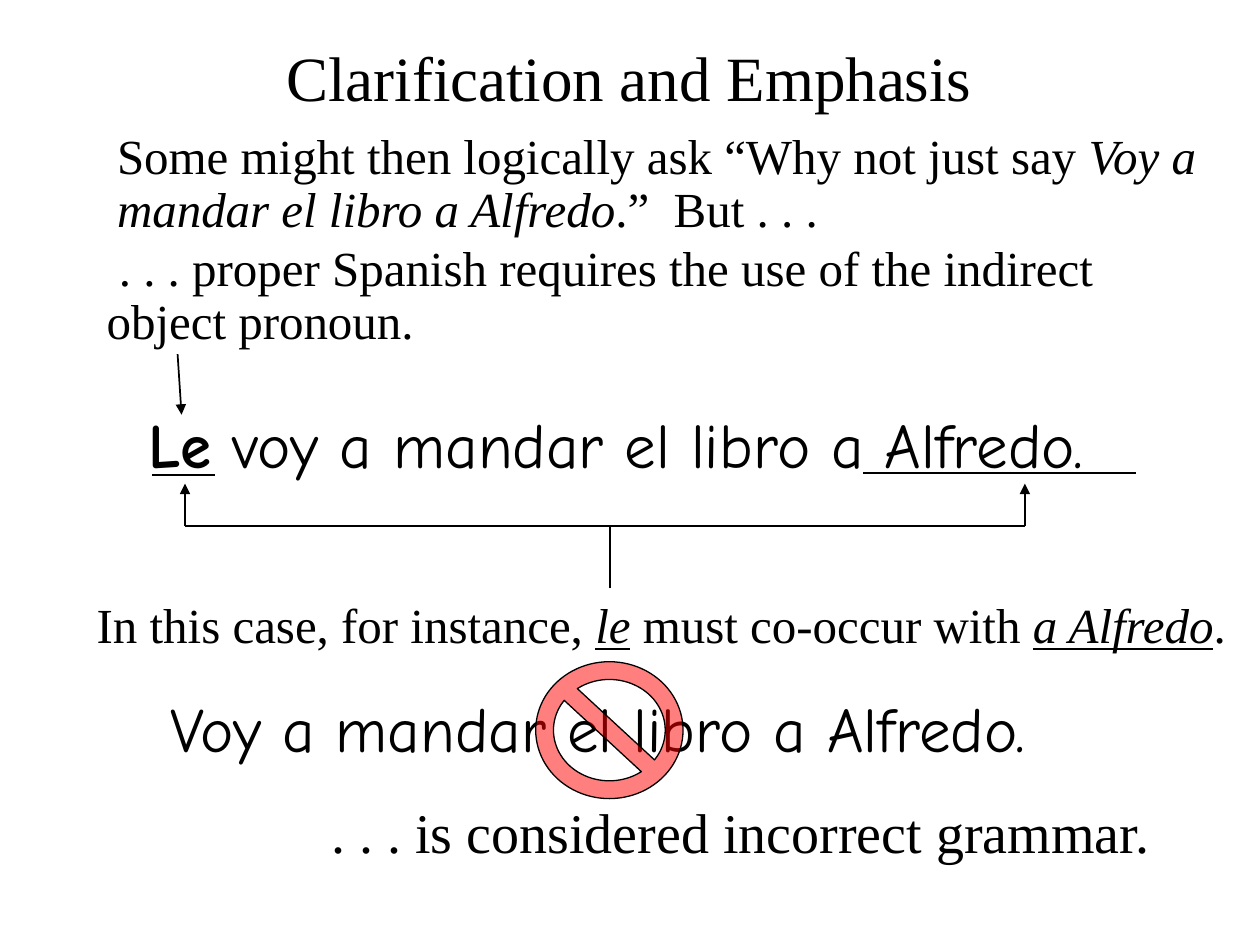
from pptx import Presentation
from pptx.dml.color import RGBColor
from pptx.enum.shapes import MSO_CONNECTOR, MSO_SHAPE
from pptx.enum.text import MSO_ANCHOR, MSO_AUTO_SIZE, PP_ALIGN
from pptx.oxml.ns import qn
from pptx.util import Cm, Pt
from lxml.etree import SubElement

BLACK = RGBColor(0x00, 0x00, 0x00)
RED = RGBColor(0xFF, 0x00, 0x00)
SERIF = "Times New Roman"
COMIC = "Comic Neue"

prs = Presentation()
prs.slide_width, prs.slide_height = Cm(25.4), Cm(19.05)
slide = prs.slides.add_slide(prs.slide_layouts[5])


def write(box, runs, font, size, line_spacing=1.0):
    """Fill a box with one paragraph of (text, style) runs: b, i and u."""
    frame = box.text_frame
    frame.word_wrap = True
    frame.auto_size = MSO_AUTO_SIZE.NONE
    frame.vertical_anchor = MSO_ANCHOR.TOP
    paragraph = frame.paragraphs[0]
    paragraph.line_spacing = line_spacing
    paragraph.space_before = Pt(size / 8)
    paragraph.font.name = font
    paragraph.font.size = Pt(size)
    paragraph.font.color.rgb = BLACK
    for text, style in runs:
        run = paragraph.add_run()
        run.text = text
        if "b" in style:
            run.font.bold = True
        if "i" in style:
            run.font.italic = True
        if "u" in style:
            run.font.underline = True
    return paragraph


# Title
title = slide.shapes.title
title.left, title.top, title.width, title.height = Cm(1.57), Cm(0.64), Cm(22.23), Cm(1.78)
heading = write(title, [("Clarification and Emphasis", "")], SERIF, 36)
heading.alignment = PP_ALIGN.CENTER

# Explanations and example sentences: position, runs, font, size, line spacing
passages = [
    ((2.11, 2.54, 22.43, 2.39),
     [("Some might then logically ask “Why not just say ", ""),
      ("Voy a mandar el libro a Alfredo", "i"), (".”  But . . .", "")], SERIF, 28, 0.9),
    ((1.9, 4.8, 21.79, 2.39),
     [(" . . . proper Spanish requires the use of the indirect object pronoun.", "")],
     SERIF, 28, 0.9),
    ((2.74, 8.05, 21.16, 1.78),
     [("Le", "b"), (" voy a mandar el libro a Alfredo.", "")], COMIC, 36, 1.0),
    ((1.7, 11.86, 23.42, 1.45),
     [("In this case, for instance, ", ""), ("le", "iu"), (" must co-occur with ", ""),
      ("a Alfredo", "iu"), (".", "")], SERIF, 28, 1.0),
    ((3.18, 13.77, 19.68, 1.78),
     [("Voy a mandar el libro a Alfredo.", "")], COMIC, 36, 1.0),
    ((6.15, 16.1, 18.21, 1.5),
     [(" . . . is considered incorrect grammar.", "")], SERIF, 32, 0.9),
]
for place, runs, font, size, spacing in passages:
    passage = slide.shapes.add_textbox(*map(Cm, place))
    write(passage, runs, font, size, spacing)

# Lines: start x, start y, end x, end y, width, arrowhead
lines = [
    (3.58, 7.14, 3.66, 8.36, 1, True),          # pronoun pointer
    (3.07, 9.58, 4.34, 9.58, 1.25, False),      # underline of Le
    (17.4, 9.53, 22.91, 9.53, 1.25, False),     # underline of Alfredo
    (12.29, 11.86, 12.29, 10.6, 1.25, False),   # bracket stem
    (3.73, 10.6, 20.66, 10.6, 1.25, False),     # bracket bar
    (3.73, 10.6, 3.73, 9.75, 1.25, True),       # bracket arm to Le
    (20.66, 10.6, 20.66, 9.75, 1.25, True),     # bracket arm to Alfredo
]
for *ends, width, arrow in lines:
    line = slide.shapes.add_connector(MSO_CONNECTOR.STRAIGHT, *map(Cm, ends))
    line.line.color.rgb = BLACK
    line.line.width = Pt(width)
    if arrow:
        SubElement(line.line._get_or_add_ln(), qn("a:tailEnd"), type="triangle")
    SubElement(line._element.spPr, qn("a:effectLst"))

# Half-transparent prohibition sign over the incorrect sentence
prohibition = slide.shapes.add_shape(
    MSO_SHAPE.NO_SYMBOL, Cm(10.8), Cm(13.34), Cm(2.97), Cm(2.76))
prohibition.adjustments[0] = 0.13
prohibition.shadow.inherit = False
prohibition.fill.solid()
prohibition.fill.fore_color.rgb = RED
red_fill = prohibition._element.spPr.find(qn("a:solidFill"))
SubElement(red_fill[0], qn("a:alpha"), val="50000")
prohibition.line.color.rgb = BLACK
prohibition.line.width = Pt(0.75)

prs.save("out.pptx")
